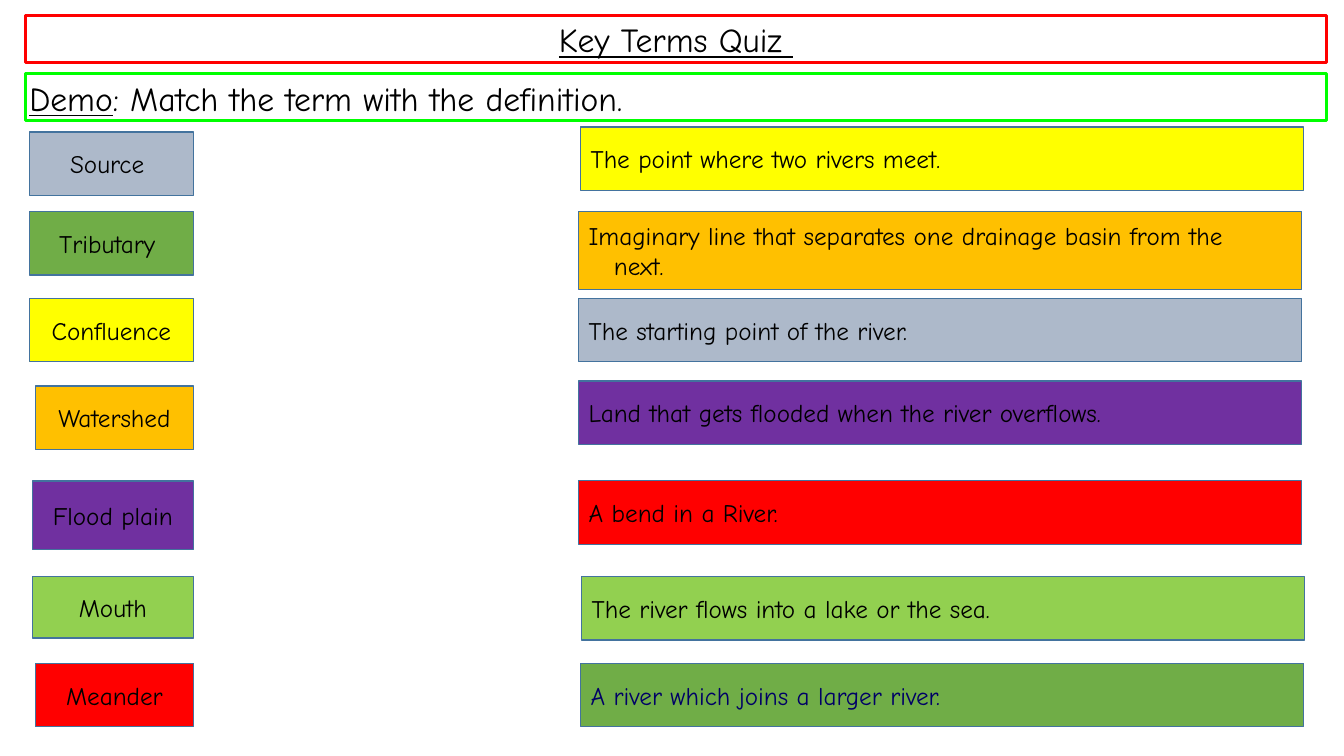
from pptx import Presentation
from pptx.dml.color import RGBColor
from pptx.enum.shapes import MSO_SHAPE as Shape
from pptx.enum.text import MSO_ANCHOR as Anchor, PP_ALIGN as Align
from pptx.util import Inches, Pt

GREY, GREEN, YELLOW, ORANGE = "ADB9CA", "70AD47", "FFFF00", "FFC000"
PURPLE, LIME, RED, NAVY = "7030A0", "92D050", "FF0000", "000066"

# text, fill, left, top, height
TERMS = [
    ("Source ", GREY, 0.29, 1.31, 0.63),
    ("Tributary ", GREEN, 0.29, 2.1, 0.63),
    ("Confluence", YELLOW, 0.29, 2.96, 0.63),
    ("Watershed", ORANGE, 0.35, 3.83, 0.63),
    ("Flood plain", PURPLE, 0.32, 4.77, 0.68),
    ("Mouth", LIME, 0.32, 5.72, 0.61),
    ("Meander", RED, 0.35, 6.58, 0.63),
]
# text, fill, left, top, height, format
MEANINGS = [
    ("The point where two rivers meet.", YELLOW, 5.76, 1.26, 0.63, {}),
    ("Imaginary line that separates one drainage basin from the next.",
     ORANGE, 5.74, 2.1, 0.77, {"hang": 0.25, "right": 0.4}),
    ("The starting point of the river.", GREY, 5.74, 2.96, 0.63, {}),
    ("Land that gets flooded when the river overflows.", PURPLE, 5.74, 3.78, 0.63, {}),
    ("A bend in a River.", RED, 5.74, 4.77, 0.63, {}),
    ("The river flows into a lake or the sea.", LIME, 5.77, 5.72, 0.63, {}),
    ("A river which joins a larger river.", GREEN, 5.76, 6.58, 0.63, {"color": NAVY}),
]
TERM_END = 1.92


def rgb(code):
    return RGBColor.from_string(code)


def write(shape, runs, size=18, color="000000", align=Align.LEFT,
          anchor=Anchor.MIDDLE, inset=None, right=None, hang=0):
    """Fill a shape with one paragraph of (text, underline) runs."""
    frame = shape.text_frame
    frame.word_wrap = True
    frame.vertical_anchor = anchor
    if inset is not None:
        frame.margin_left = frame.margin_right = Inches(inset)
        frame.margin_top = frame.margin_bottom = Inches(inset)
    if right is not None:
        frame.margin_right = Inches(right)
    para = frame.paragraphs[0]
    para.alignment = align
    if hang:
        props = para._p.get_or_add_pPr()
        props.set("marL", str(Inches(hang)))
        props.set("indent", str(-Inches(hang)))
    for text, under in runs:
        run = para.add_run()
        run.text = text
        font = run.font
        font.name, font.size, font.underline = "Comic Neue", Pt(size), under
        font.color.rgb = rgb(color)


def box(slide, left, top, width, height, fill, line="43739E", weight=1):
    shape = slide.shapes.add_shape(Shape.RECTANGLE, Inches(left), Inches(top),
                                   Inches(width), Inches(height))
    shape.shadow.inherit = False
    shape.fill.solid()
    shape.fill.fore_color.rgb = rgb(fill)
    shape.line.color.rgb = rgb(line)
    shape.line.width = Pt(weight)
    return shape


def banner(slide, top, line, runs, align):
    shape = box(slide, 0.25, top, 12.91, 0.47, "FFFFFF", line, 2.25)
    write(shape, runs, size=24, align=align, anchor=Anchor.TOP, inset=0.04)


def terms(slide):
    for text, fill, left, top, height in TERMS:
        shape = box(slide, left, top, TERM_END - left, height, fill)
        write(shape, [(text, False)], align=Align.CENTER)


def meanings(slide):
    for text, fill, left, top, height, style in MEANINGS:
        shape = box(slide, left, top, 7.17, height, fill)
        write(shape, [(text, False)], **style)


def main():
    deck = Presentation()
    deck.slide_width, deck.slide_height = Inches(13.33), Inches(7.5)
    slide = deck.slides.add_slide(deck.slide_layouts[6])
    meanings(slide)
    terms(slide)
    banner(slide, 0.15, RED, [("Key Terms Quiz ", True)], Align.CENTER)
    banner(slide, 0.73, "00FF00",
           [("Demo", True), (": Match the term with the definition.", False)], Align.LEFT)
    deck.save("out.pptx")


if __name__ == "__main__":
    main()
